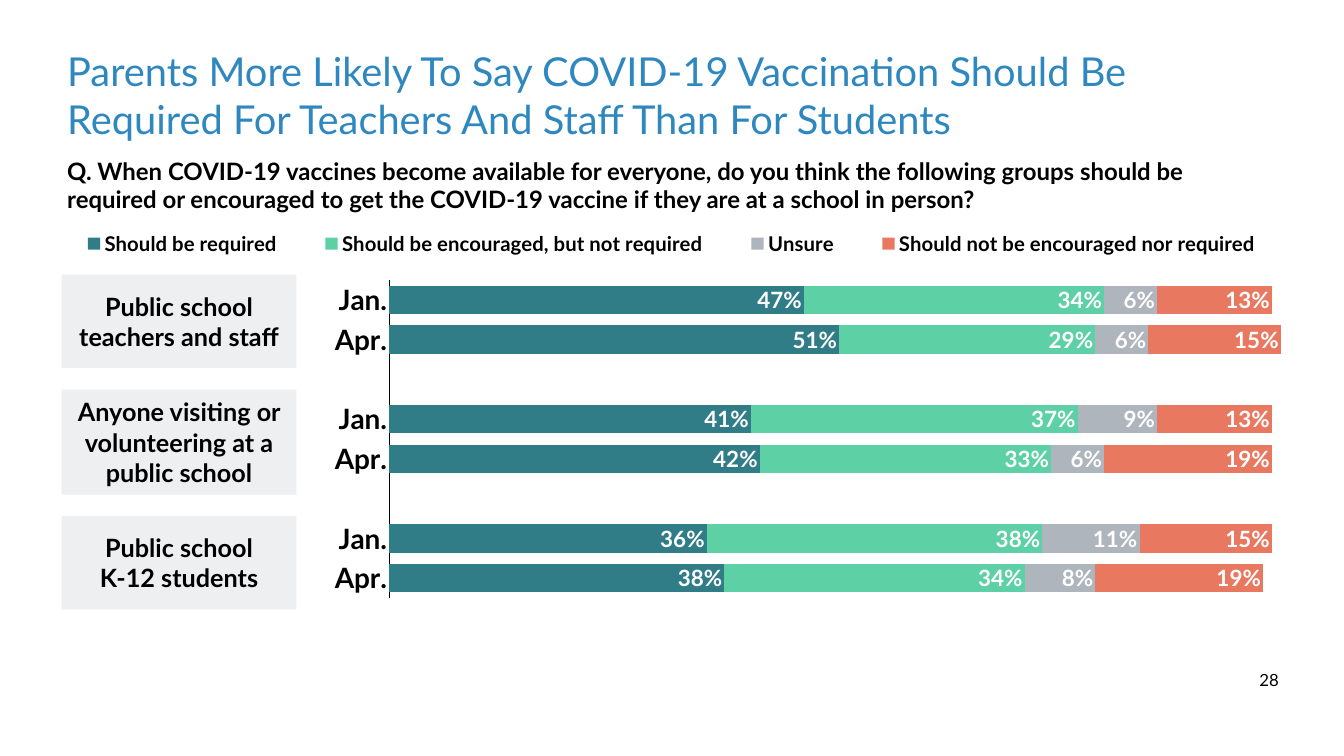
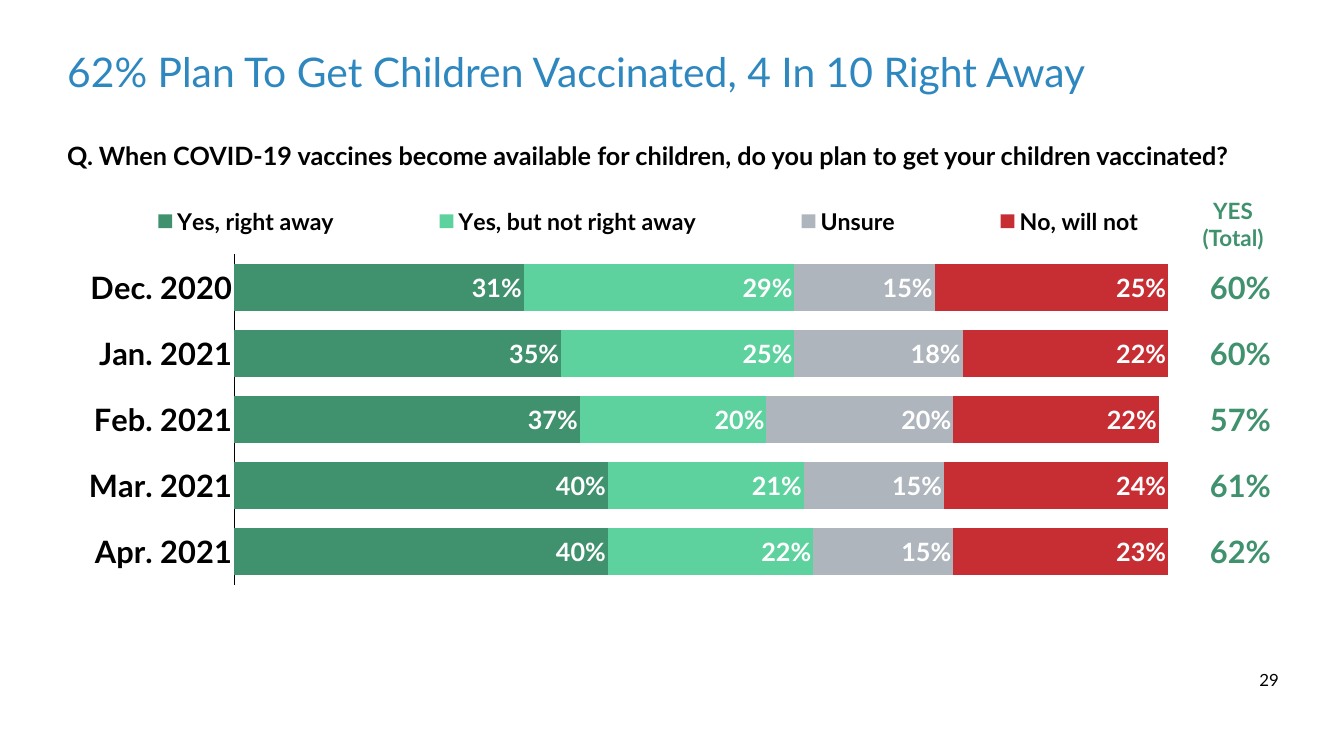
from dataclasses import dataclass
from typing import NamedTuple

from lxml import etree
from pptx import Presentation
from pptx import slide as sl
from pptx import util as u
from pptx.chart import data as cd
from pptx.dml import color
from pptx.enum import chart as ec
from pptx.enum import shapes, text
from pptx.oxml import ns

FONT = "Lato"
COLORS = {
    "title": "2E88BF",
    "black": "000000",
    "white": "FFFFFF",
    "panel": "EEEFF1",
    "teal": "317D87",
    "mint": "5DD0A5",
    "grey": "AEB5BC",
    "coral": "E97861",
    "green": "40916E",
    "light_green": "5DD19E",
    "red": "C62E33",
}
INSET = 6
LEFT, WIDTH = 90, 1740


class Box(NamedTuple):
    x: float
    y: float
    w: float
    h: float

    def pts(self) -> list:
        return [u.Pt(v) for v in self]


class Layout(NamedTuple):
    x: float
    y: float
    w: float
    h: float


class Style(NamedTuple):
    size: float
    color: str = "black"
    bold: bool = True


class Series(NamedTuple):
    name: str
    color: str
    values: list


@dataclass
class BarChart:
    box: Box
    plot: Layout
    legend: Layout
    cats: list
    series: list
    cat_size: float
    legend_size: float
    label_size: float


def rgb(name: str) -> color.RGBColor:
    return color.RGBColor.from_string(COLORS[name])


def style_font(font, style: Style) -> None:
    font.name = FONT
    font.size = u.Pt(style.size)
    font.bold = style.bold
    font.color.rgb = rgb(style.color)


def fill_text(tf, words: str, style: Style, align=text.PP_ALIGN.CENTER,
              anchor=text.MSO_ANCHOR.TOP, inset: float = INSET,
              spacing: float = 1.0) -> None:
    tf.text = words
    tf.vertical_anchor = anchor
    tf.margin_left = tf.margin_right = u.Pt(inset)
    tf.margin_top = tf.margin_bottom = u.Pt(inset)
    for p in tf.paragraphs:
        p.alignment = align
        p.line_spacing = spacing
        p.space_before = u.Pt(0)
        for r in p.runs:
            style_font(r.font, style)


def add_label(s: sl.Slide, box: Box, words: str, style: Style,
              wrap: bool = False, **options) -> None:
    tf = s.shapes.add_textbox(*box.pts()).text_frame
    fill_text(tf, words, style, **options)
    tf.word_wrap = wrap
    tf.auto_size = (text.MSO_AUTO_SIZE.NONE if wrap
                    else text.MSO_AUTO_SIZE.SHAPE_TO_FIT_TEXT)


def add_panel(s: sl.Slide, box: Box, words: str) -> None:
    sp = s.shapes.add_shape(shapes.MSO_SHAPE.RECTANGLE, *box.pts())
    sp.shadow.inherit = False
    sp.fill.solid()
    sp.fill.fore_color.rgb = rgb("panel")
    sp.line.fill.background()
    fill_text(sp.text_frame, words, Style(36),
              anchor=text.MSO_ANCHOR.MIDDLE, inset=10)


def set_layout(parent, index: int, layout: Layout, inner: bool = False) -> None:
    for old in parent.findall(ns.qn("c:layout")):
        parent.remove(old)
    el = etree.Element(ns.qn("c:layout"))
    manual = etree.SubElement(el, ns.qn("c:manualLayout"))
    values = {"layoutTarget": "inner"} if inner else {}
    values |= {"xMode": "edge", "yMode": "edge"}
    values |= {k: str(v) for k, v in layout._asdict().items()}
    for tag, value in values.items():
        etree.SubElement(manual, ns.qn(f"c:{tag}")).set("val", value)
    parent.insert(index, el)


def add_bar_chart(s: sl.Slide, spec: BarChart) -> None:
    data = cd.CategoryChartData(number_format="#,##0%")
    data.categories = spec.cats
    for item in spec.series:
        data.add_series(item.name, item.values)
    chart = s.shapes.add_chart(ec.XL_CHART_TYPE.BAR_STACKED,
                               *spec.box.pts(), data).chart
    style_font(chart.font, Style(10, bold=False))
    chart.has_title = False

    chart.has_legend = True
    legend = chart.legend
    legend.position = ec.XL_LEGEND_POSITION.TOP
    legend.include_in_layout = True
    style_font(legend.font, Style(spec.legend_size))
    set_layout(legend._element, 1, spec.legend)
    set_layout(chart._chartSpace.chart.plotArea, 0, spec.plot, inner=True)

    cat_axis, val_axis = chart.category_axis, chart.value_axis
    for axis in (cat_axis, val_axis):
        axis.has_major_gridlines = False
        axis.major_tick_mark = axis.minor_tick_mark = ec.XL_TICK_MARK.NONE
    cat_axis.reverse_order = True
    cat_axis.format.line.color.rgb = rgb("black")
    cat_axis.format.line.width = u.Pt(1)
    style_font(cat_axis.tick_labels.font, Style(spec.cat_size))
    val_axis.tick_label_position = ec.XL_TICK_LABEL_POSITION.NONE
    val_axis.format.line.fill.background()
    val_axis.minimum_scale, val_axis.maximum_scale = 0, 1.01

    plot = chart.plots[0]
    plot.gap_width, plot.overlap = 40, 100
    plot.vary_by_categories = False
    for series, item in zip(plot.series, spec.series):
        series.invert_if_negative = False
        series.format.fill.solid()
        series.format.fill.fore_color.rgb = rgb(item.color)
        labels = series.data_labels
        labels.show_value = True
        labels.position = ec.XL_LABEL_POSITION.INSIDE_END
        labels.number_format = "#,##0%"
        labels.number_format_is_linked = False
        style_font(labels.font, Style(spec.label_size, "white"))


def add_totals(s: sl.Slide, box: Box, totals: list) -> None:
    table = s.shapes.add_table(len(totals), 1, *box.pts()).table
    table.first_row = table.horz_banding = False
    for row, total in zip(table.rows, totals):
        row.height = u.Pt(box.h / len(totals))
        cell = row.cells[0]
        cell.fill.background()
        fill_text(cell.text_frame, total, Style(44, "green"))
        cell.vertical_anchor = text.MSO_ANCHOR.MIDDLE
        cell.margin_left = cell.margin_right = u.Pt(4.5)
        cell.margin_top = cell.margin_bottom = u.Pt(4.5)


def add_slide(prs, title: str, size: float, number: int) -> sl.Slide:
    s = prs.slides.add_slide(prs.slide_layouts[5])
    sp = s.shapes.title
    sp.left, sp.top, sp.width, sp.height = Box(LEFT, 60.5, WIDTH, 150).pts()
    fill_text(sp.text_frame, title, Style(size, "title", False),
              align=text.PP_ALIGN.LEFT)
    sp.text_frame.auto_size = text.MSO_AUTO_SIZE.NONE
    add_label(s, Box(1793, 950, 40, 40), str(number), Style(24, bold=False))
    return s


def add_question(s: sl.Slide, y: float, words: str, size: float,
                 spacing: float = 1.0) -> None:
    add_label(s, Box(LEFT, y, WIDTH, 94), words, Style(size), wrap=True,
              align=text.PP_ALIGN.LEFT, spacing=spacing)


def requirement_slide(prs) -> None:
    s = add_slide(prs, "Parents More Likely To Say COVID-19 Vaccination Should Be "
                  "Required For Teachers And Staff Than For Students", 56.9, 28)
    add_bar_chart(s, BarChart(
        box=Box(66, 323, 1787, 557),
        plot=Layout(0.274, 0.138, 0.713, 0.816),
        legend=Layout(0, 0, 1, 0.09),
        cats=["Jan.", "Apr.", "", "Jan.", "Apr.", "", "Jan.", "Apr."],
        series=[
            Series("Should be required", "teal",
                   [0.47, 0.51, None, 0.41, 0.42, None, 0.36, 0.38]),
            Series("Should be encouraged, but not required", "mint",
                   [0.34, 0.29, None, 0.37, 0.33, None, 0.38, 0.34]),
            Series("Unsure", "grey",
                   [0.06, 0.06, None, 0.09, 0.06, None, 0.11, 0.08]),
            Series("Should not be encouraged nor required", "coral",
                   [0.13, 0.15, None, 0.13, 0.19, None, 0.15, 0.19]),
        ],
        cat_size=40, legend_size=29, label_size=32))
    y, gap = 392.5, 31
    for words, height in (
        ("Public school teachers and staff", 133),
        ("Anyone visiting or volunteering at a public school", 150),
        ("Public school\nK-12 students", 133),
    ):
        add_panel(s, Box(88, y, 335.5, height), words)
        y += height + gap
    add_question(s, 217, "Q. When COVID-19 vaccines become available for everyone, "
                 "do you think the following groups should be required or encouraged "
                 "to get the COVID-19 vaccine if they are at a school in person?", 34.2)


def plans_slide(prs) -> None:
    s = add_slide(prs, "62% Plan To Get Children Vaccinated, 4 In 10 Right Away",
                  58.3, 29)
    add_question(s, 200, "Q. When COVID-19 vaccines become available for children, "
                 "do you plan to get your children vaccinated?", 36, spacing=0.9)
    add_bar_chart(s, BarChart(
        box=Box(86, 289, 1680, 572),
        plot=Layout(0.148, 0.13, 0.802, 0.825),
        legend=Layout(0, 0, 1, 0.095),
        cats=["Dec. 2020", "Jan. 2021", "Feb. 2021", "Mar. 2021", "Apr. 2021"],
        series=[
            Series("Yes, right away", "green", [0.31, 0.35, 0.37, 0.4, 0.4]),
            Series("Yes, but not right away", "light_green",
                   [0.29, 0.25, 0.2, 0.21, 0.22]),
            Series("Unsure", "grey", [0.15, 0.18, 0.2, 0.15, 0.15]),
            Series("No, will not", "red", [0.25, 0.22, 0.22, 0.24, 0.23]),
        ],
        cat_size=44, legend_size=33, label_size=36))
    add_label(s, Box(1705.5, 276.5, 112, 87), "YES\n(Total)", Style(32, "green"),
              anchor=text.MSO_ANCHOR.MIDDLE)
    add_totals(s, Box(1684, 363, 176, 473), ["60%", "60%", "57%", "61%", "62%"])


def main() -> None:
    prs = Presentation()
    prs.slide_width, prs.slide_height = u.Pt(1920), u.Pt(1080)
    requirement_slide(prs)
    plans_slide(prs)
    prs.save("out.pptx")


if __name__ == "__main__":
    main()
